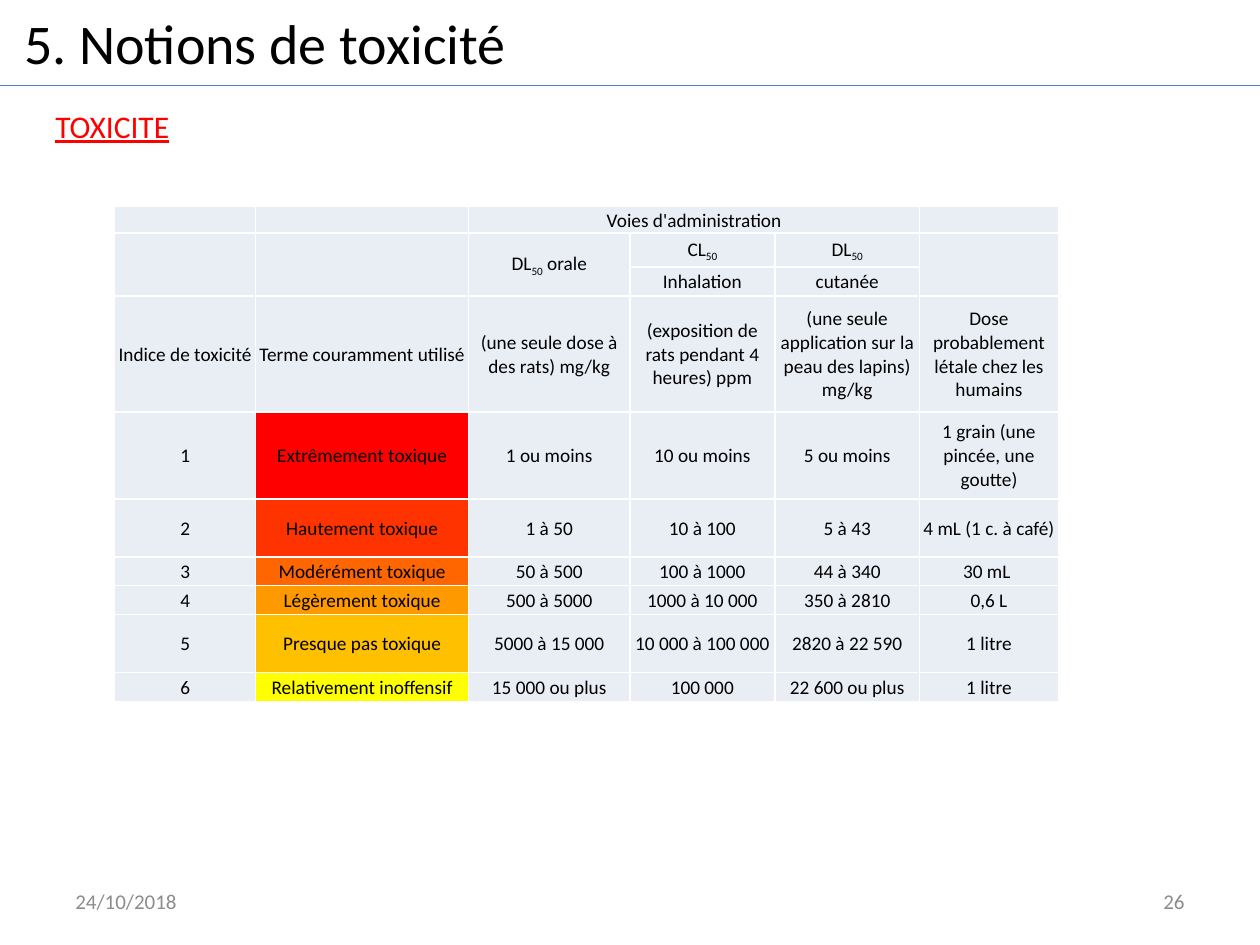
from lxml import etree
from pptx import Presentation, util as u
from pptx.dml.color import RGBColor
from pptx.enum import shapes, text
from pptx.oxml.ns import qn

BLACK = RGBColor(0, 0, 0)
RED = RGBColor(255, 0, 0)
GREY = RGBColor(0x8C, 0x8C, 0x8C)
BLUE = RGBColor(0x4B, 0x7E, 0xBC)
PALE = RGBColor(0xE9, 0xED, 0xF4)
SCALE = [RED, RGBColor(255, 0x33, 0), RGBColor(255, 0x66, 0),
         RGBColor(255, 0x99, 0), RGBColor(255, 0xC0, 0), RGBColor(255, 255, 0)]
ALIGN, MID = text.PP_ALIGN, text.MSO_ANCHOR.MIDDLE

deck = Presentation()
deck.slide_width, deck.slide_height = u.Inches(10), u.Inches(7.5)
slide = deck.slides.add_slide(deck.slide_layouts[5])


def area(*pct):
    """Turn percentages of the slide into left, top, width, height."""
    sides = (deck.slide_width, deck.slide_height) * 2
    return [int(side * p / 100) for side, p in zip(sides, pct)]


def write(par, words, size, color, align):
    """Fill a paragraph; every second part between bars is a subscript."""
    par.alignment = align
    for i, part in enumerate(words.split("|")):
        run = par.add_run()
        run.text = part
        form = {"name": "Calibri", "size": u.Pt(size), "bold": False}
        for key, val in form.items():
            setattr(run.font, key, val)
        run.font.color.rgb = color
        if i % 2:
            run.font._element.set("baseline", "-25000")
    return par


# Rule under the title
rule = slide.shapes.add_connector(shapes.MSO_CONNECTOR.STRAIGHT, *area(0, 9.07, 100, 9.07))
rule.line.color.rgb, rule.line.width = BLUE, u.Pt(0.75)
etree.SubElement(rule._element.spPr, qn("a:effectLst"))

# Title, heading and footer
title = slide.shapes.title
TEXTS = [
    (title, (0.7, 0.27, 40.7, 8.53), "5. Notions de toxicité", 32, BLACK, ALIGN.CENTER, False),
    (None, (3.4, 10.67, 11.1, 5.33), "TOXICITE", 18, RED, ALIGN.LEFT, False),
    (None, (5, 92.67, 23.3, 5.33), "24/10/2018", 12, GREY, ALIGN.LEFT, True),
    (None, (71.7, 92.67, 23.3, 5.33), "26", 12, GREY, ALIGN.RIGHT, True),
]
for box, place, words, size, color, align, wrap in TEXTS:
    spot = area(*place)
    box = box or slide.shapes.add_textbox(*spot)
    box.left, box.top, box.width, box.height = spot
    frame = box.text_frame
    frame.word_wrap = wrap
    frame.auto_size = text.MSO_AUTO_SIZE.NONE if wrap else text.MSO_AUTO_SIZE.SHAPE_TO_FIT_TEXT
    frame.vertical_anchor = MID if wrap else text.MSO_ANCHOR.TOP
    par = write(frame.paragraphs[0], words, size, color, align)
    if words == "TOXICITE":
        par.runs[0].font.underline = True

# Toxicity table
ROWS = [
    ["", "", "Voies d'administration", "", "", ""],
    ["", "", "DL|50| orale", "CL|50", "DL|50", ""],
    ["", "", "", "Inhalation", "cutanée", ""],
    ["Indice de toxicité", "Terme couramment utilisé", "(une seule dose à des rats) mg/kg",
     "(exposition de rats pendant 4 heures) ppm",
     "(une seule application sur la peau des lapins) mg/kg",
     "Dose probablement létale chez les humains"],
    ["1", "Extrêmement toxique", "1 ou moins", "10 ou moins", "5 ou moins",
     "1 grain (une pincée, une goutte)"],
    ["2", "Hautement toxique", "1 à 50", "10 à 100", "5 à 43", "4 mL (1 c. à café)"],
    ["3", "Modérément toxique", "50 à 500", "100 à 1000", "44 à 340", "30 mL "],
    ["4", "Légèrement toxique", "500 à 5000", "1000 à 10 000", "350 à 2810", "0,6 L"],
    ["5", "Presque pas toxique", "5000 à 15 000", "10 000 à 100 000", "2820 à 22 590", "1 litre"],
    ["6", "Relativement inoffensif", "15 000 ou plus", "100 000", "22 600 ou plus", "1 litre"],
]
WIDE = [1.12, 1.69, 1.28, 1.15, 1.15, 1.1]
HIGH = [0.21, 0.27, 0.23, 0.92, 0.69, 0.46, 0.23, 0.23, 0.46, 0.23]
HEAD = 4
grid = slide.shapes.add_table(len(ROWS), len(WIDE), *area(9.1, 21.87, 74.9, 52.27)).table
grid.first_row = grid.horz_banding = False
for col, wide in zip(grid.columns, WIDE):
    col.width = u.Inches(wide)
for row, high in zip(grid.rows, HIGH):
    row.height = u.Inches(high)

PAD = {"margin_left": 0.01, "margin_right": 0.01, "margin_top": 0.01, "margin_bottom": 0}
for r, row in enumerate(ROWS):
    for c, words in enumerate(row):
        cell = grid.cell(r, c)
        for key, val in PAD.items():
            setattr(cell, key, u.Inches(val))
        cell.vertical_anchor = MID
        par = cell.text_frame.paragraphs[0]
        if words:
            write(par, words, 11, BLACK, ALIGN.CENTER)
        else:
            par._p.get_or_add_endParaRPr().set("sz", "1100")
        # White borders come before the fill
        props = cell._tc.get_or_add_tcPr()
        for side in "LRTB":
            edge = etree.SubElement(props, qn("a:ln" + side), w="12700")
            fill = etree.SubElement(edge, qn("a:solidFill"))
            etree.SubElement(fill, qn("a:srgbClr"), val="FFFFFF")
        cell.fill.solid()
        cell.fill.fore_color.rgb = SCALE[r - HEAD] if c == 1 and r >= HEAD else PALE

# Merged header cells
grid.cell(0, 2).merge(grid.cell(0, 4))
for c in (0, 1, 2, 5):
    grid.cell(1, c).merge(grid.cell(2, c))

deck.save("out.pptx")
